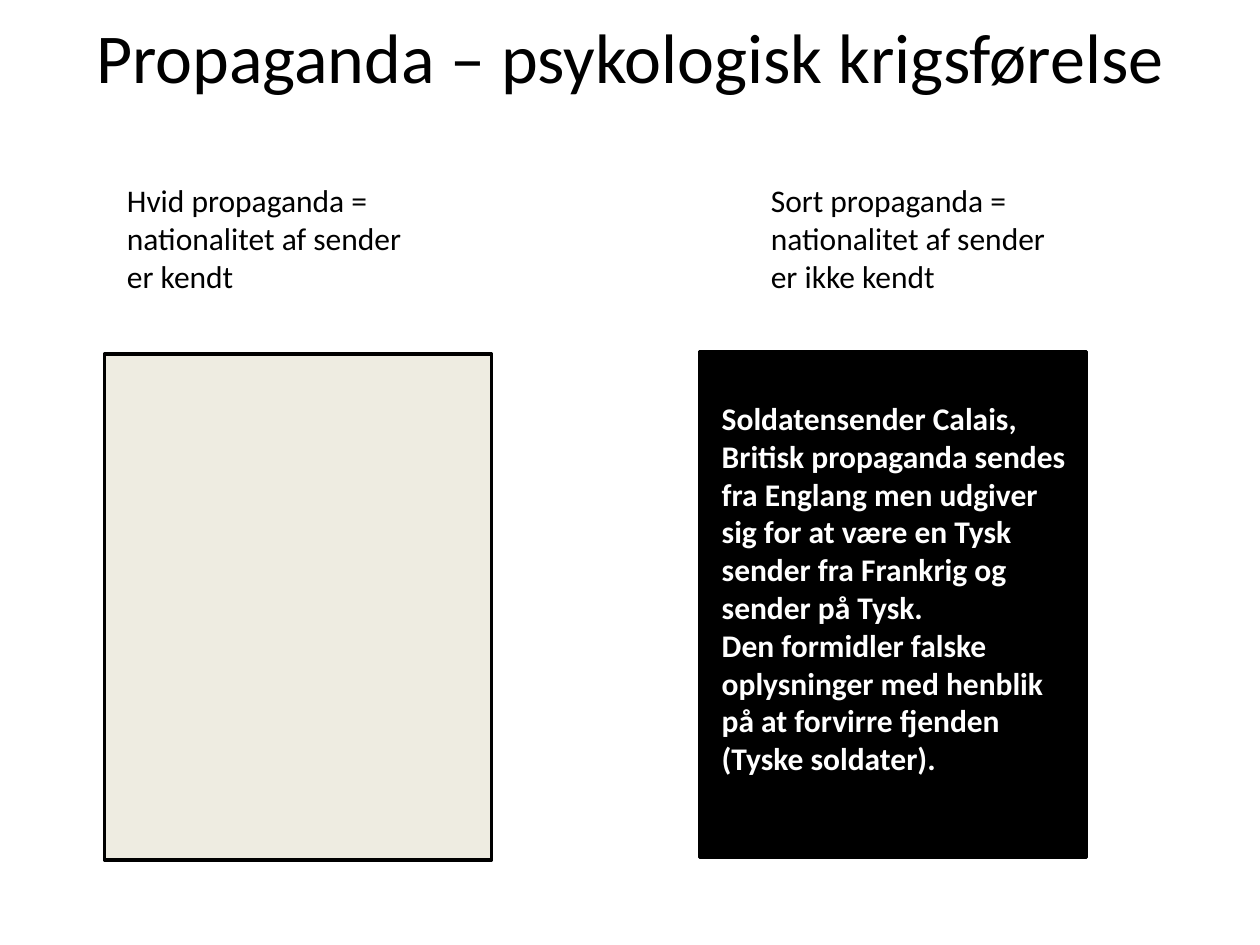
from pptx import Presentation
from pptx.dml.color import RGBColor
from pptx.enum import shapes, text
from pptx import util as u

BLACK = RGBColor(0x00, 0x00, 0x00)
WHITE = RGBColor(0xFF, 0xFF, 0xFF)
CREAM = RGBColor(0xEE, 0xEC, 0xE1)
FONT = "Calibri"

BROADCAST = [
    "Soldatensender Calais,",
    "Britisk propaganda sendes fra Englang men udgiver sig for at være "
    "en Tysk sender fra Frankrig og sender på Tysk.",
    "Den formidler falske oplysninger med henblik på at forvirre fjenden "
    "(Tyske soldater).",
]


def style(p, size, color, bold=False):
    p.font.name = FONT
    p.font.size = u.Pt(size)
    p.font.bold = bold
    p.font.color.rgb = color


def set_title(s, title):
    sp = s.shapes.title
    sp.left, sp.top = u.Cm(1.27), u.Cm(-0.48)
    sp.width, sp.height = u.Cm(22.86), u.Cm(3.18)
    tf = sp.text_frame
    tf.text = title
    tf.vertical_anchor = text.MSO_ANCHOR.MIDDLE
    tf.auto_size = text.MSO_AUTO_SIZE.NONE
    p = tf.paragraphs[0]
    p.alignment = text.PP_ALIGN.CENTER
    style(p, 40, BLACK)


def add_text(s, left, top, width, height, lines, color=BLACK, bold=False):
    sp = s.shapes.add_textbox(u.Cm(left), u.Cm(top), u.Cm(width), u.Cm(height))
    tf = sp.text_frame
    tf.word_wrap = True
    tf.auto_size = text.MSO_AUTO_SIZE.SHAPE_TO_FIT_TEXT
    tf.text = "\n".join(lines)
    for p in tf.paragraphs:
        style(p, 18, color, bold)


def add_panel(s, left, top, fill):
    sp = s.shapes.add_shape(shapes.MSO_SHAPE.RECTANGLE,
                            u.Cm(left), u.Cm(top), u.Cm(7.8), u.Cm(10.2))
    sp.shadow.inherit = False
    sp.fill.solid()
    sp.fill.fore_color.rgb = fill
    sp.line.color.rgb = BLACK
    sp.line.width = u.Pt(2)


def main():
    prs = Presentation()
    prs.slide_width, prs.slide_height = u.Cm(25.4), u.Cm(19.05)
    s = prs.slides.add_slide(prs.slide_layouts[5])
    set_title(s, "Propaganda – psykologisk krigsførelse")
    columns = [
        (2.31, "Hvid propaganda = nationalitet af sender er kendt",
         2.11, 7.14, CREAM),
        (15.29, "Sort propaganda = nationalitet af sender er ikke kendt",
         14.1, 7.09, BLACK),
    ]
    for text_left, heading, panel_left, panel_top, fill in columns:
        add_text(s, text_left, 3.53, 6.2, 2.57, [heading])
        add_panel(s, panel_left, panel_top, fill)
    add_text(s, 14.3, 7.92, 7.6, 9.5, BROADCAST, WHITE, bold=True)
    prs.save("out.pptx")


if __name__ == "__main__":
    main()
